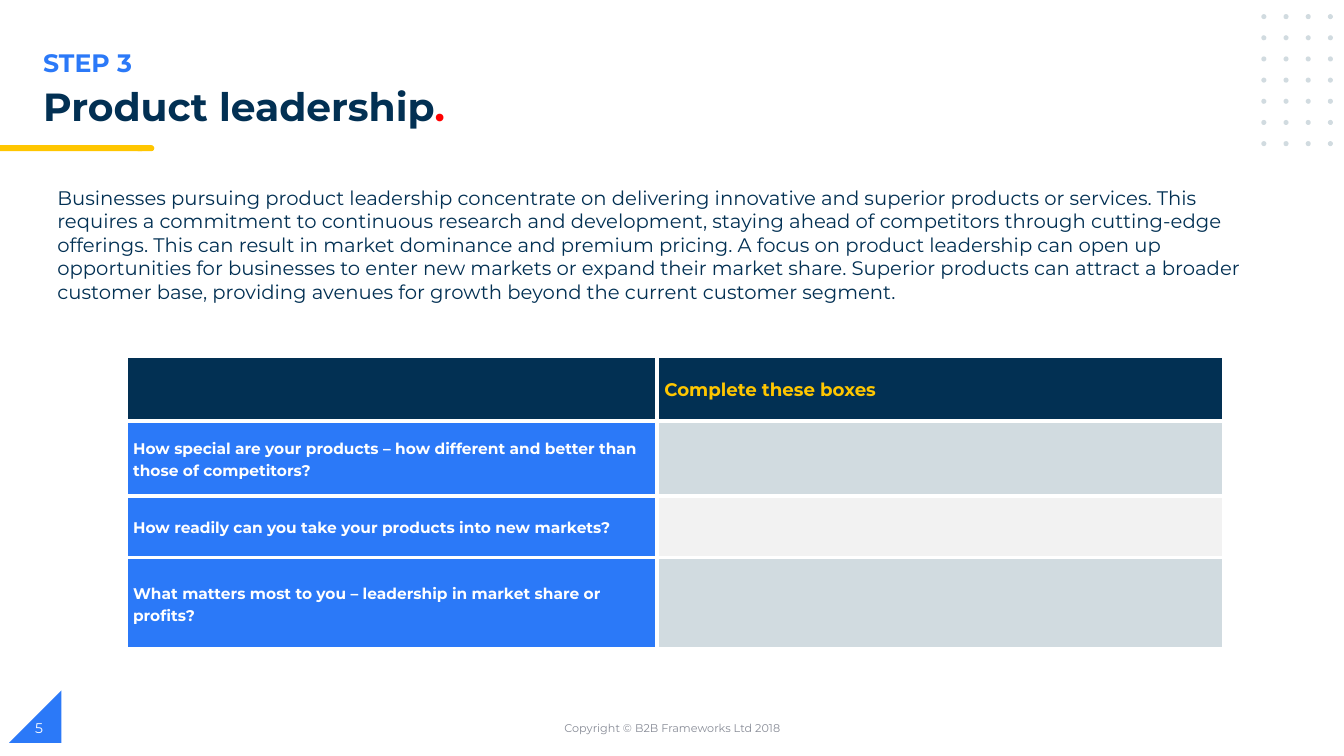
"""Build the product leadership worksheet slide."""
from itertools import product

from lxml.etree import SubElement
from pptx import Presentation
from pptx.dml.color import RGBColor
from pptx.enum.shapes import MSO_SHAPE
from pptx.enum.text import MSO_ANCHOR, PP_ALIGN
from pptx.oxml.ns import qn
from pptx.util import Inches, Pt

FONT = "Montserrat"
NAVY, BLUE, YELLOW, RED = "023053", "2B79F8", "FFC600", "FF0000"
WHITE, MIST, PALE, GREY = "FFFFFF", "D1DBE0", "F2F2F2", "888C97"

STEP = [("STEP 3", BLUE)]
TITLE = [("Product leadership", NAVY), (".", RED)]
INTRO = [(
    "Businesses pursuing product leadership concentrate on delivering innovative and superior "
    "products or services. This requires a commitment to continuous research and development, "
    "staying ahead of competitors through cutting-edge offerings. This can result in market "
    "dominance and premium pricing. A focus on product leadership can open up opportunities for "
    "businesses to enter new markets or expand their market share. Superior products can attract "
    "a broader customer base, providing avenues for growth beyond the current customer segment.",
    NAVY)]
COPYRIGHT = [("Copyright © B2B Frameworks Ltd 2018", GREY)]
PAGE_NUMBER = [("5", WHITE)]

HEADER = "Complete these boxes"
QUESTIONS = [
    "How special are your products – how different and better than those of competitors?",
    "How readily can you take your products into new markets?",
    "What matters most to you – leadership in market share or profits?",
]
COLUMN_WIDTHS = [5.27, 5.62]
ROW_HEIGHTS = [0.65, 0.74, 0.61, 0.91]
TABLE_LEFT, TABLE_TOP = 1.25, 3.53

DOT_COLUMNS, DOT_ROWS = 4, 7
DOT_LEFT, DOT_TOP, DOT_SIZE = 12.51, 0.14, 0.05
DOT_STEP_X, DOT_STEP_Y = 0.22, 0.21


def color(hex_value):
    return RGBColor.from_string(hex_value)


def add_runs(paragraph, runs, size, bold=False):
    for text, hex_value in runs:
        run = paragraph.add_run()
        run.text = text
        run.font.name = FONT
        run.font.size = Pt(size)
        run.font.bold = bold
        run.font.color.rgb = color(hex_value)


def add_text(slide, box, runs, size, bold=False, anchor=MSO_ANCHOR.TOP,
             align=PP_ALIGN.LEFT, spacing=1.0):
    frame = slide.shapes.add_textbox(*map(Inches, box)).text_frame
    frame.word_wrap = True
    frame.vertical_anchor = anchor
    paragraph = frame.paragraphs[0]
    paragraph.alignment = align
    paragraph.line_spacing = spacing
    add_runs(paragraph, runs, size, bold)


def add_block(slide, kind, box, hex_value):
    shape = slide.shapes.add_shape(kind, *map(Inches, box))
    shape.shadow.inherit = False
    shape.fill.solid()
    shape.fill.fore_color.rgb = color(hex_value)
    shape.line.fill.background()
    return shape


def add_borders(cell):
    properties = cell._tc.get_or_add_tcPr()
    for position, side in enumerate(("a:lnL", "a:lnR", "a:lnT", "a:lnB")):
        line = properties.makeelement(qn(side), {"w": str(Pt(3))})
        fill = SubElement(line, qn("a:solidFill"))
        SubElement(fill, qn("a:srgbClr"), val=WHITE)
        properties.insert(position, line)


def fill_cell(cell, text, text_color, size, background):
    cell.fill.solid()
    cell.fill.fore_color.rgb = color(background)
    add_borders(cell)
    cell.vertical_anchor = MSO_ANCHOR.MIDDLE
    cell.margin_left = cell.margin_right = Inches(0.07)
    cell.margin_top = cell.margin_bottom = 0
    paragraph = cell.text_frame.paragraphs[0]
    paragraph.line_spacing = 1.15
    if text:
        add_runs(paragraph, [(text, text_color)], size, True)


def add_worksheet(slide):
    table = slide.shapes.add_table(
        len(ROW_HEIGHTS), len(COLUMN_WIDTHS), Inches(TABLE_LEFT), Inches(TABLE_TOP),
        Inches(sum(COLUMN_WIDTHS)), Inches(sum(ROW_HEIGHTS))).table
    for column, width in zip(table.columns, COLUMN_WIDTHS):
        column.width = Inches(width)
    for row, height in zip(table.rows, ROW_HEIGHTS):
        row.height = Inches(height)
    fill_cell(table.cell(0, 0), "", YELLOW, 13, NAVY)
    fill_cell(table.cell(0, 1), HEADER, YELLOW, 13, NAVY)
    for row, question in enumerate(QUESTIONS, 1):
        fill_cell(table.cell(row, 0), question, WHITE, 11, BLUE)
        fill_cell(table.cell(row, 1), "", NAVY, 11, MIST if row % 2 else PALE)


def main():
    presentation = Presentation()
    presentation.slide_width = Inches(13.33)
    presentation.slide_height = Inches(7.5)
    slide = presentation.slides.add_slide(presentation.slide_layouts[6])

    corner = add_block(slide, MSO_SHAPE.RIGHT_TRIANGLE, (0.09, 6.85, 0.52, 0.52), BLUE)
    corner.element.spPr.find(qn("a:xfrm")).set("flipH", "1")
    add_block(slide, MSO_SHAPE.FLOWCHART_TERMINATOR, (1.34, 1.44, 0.19, 0.06), YELLOW)
    add_block(slide, MSO_SHAPE.RECTANGLE, (0, 1.44, 1.41, 0.06), YELLOW)
    for row, column in product(range(DOT_ROWS), range(DOT_COLUMNS)):
        left = DOT_LEFT + column * DOT_STEP_X
        top = DOT_TOP + row * DOT_STEP_Y
        add_block(slide, MSO_SHAPE.OVAL, (left, top, DOT_SIZE, DOT_SIZE), MIST)

    add_text(slide, (0.33, 0.42, 6.69, 0.4), STEP, 18, bold=True)
    add_text(slide, (0.33, 0.82, 11.83, 0.56), TITLE, 28, bold=True, spacing=0.9)
    add_text(slide, (0.47, 1.79, 11.99, 1.28), INTRO, 14)
    add_worksheet(slide)
    add_text(slide, (4.42, 7.02, 4.5, 0.4), COPYRIGHT, 8,
             anchor=MSO_ANCHOR.MIDDLE, align=PP_ALIGN.CENTER)
    add_text(slide, (0.25, 7.02, 3, 0.4), PAGE_NUMBER, 10, anchor=MSO_ANCHOR.MIDDLE)
    presentation.save("out.pptx")


if __name__ == "__main__":
    main()
